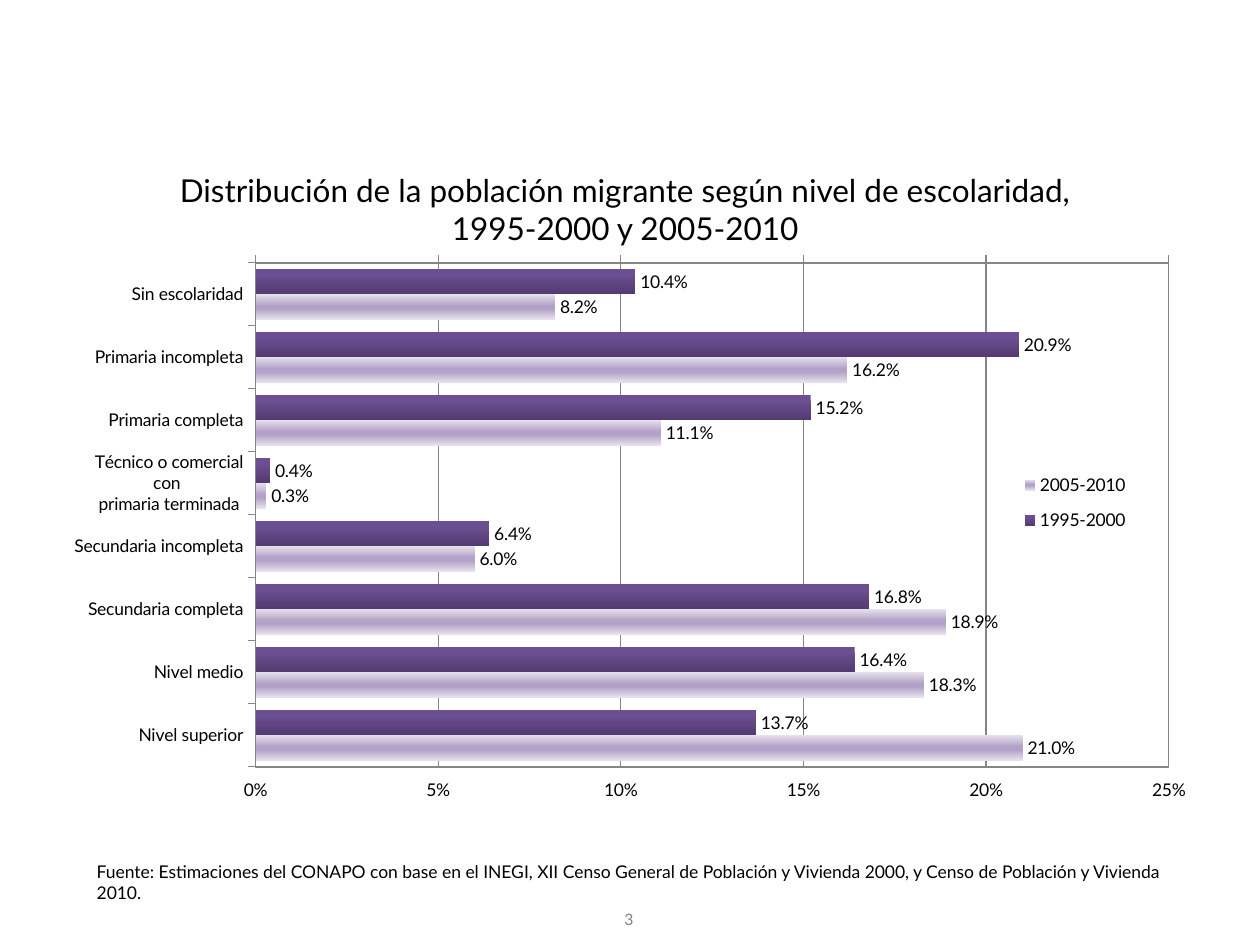
"""Build the slide on the schooling of the migrant population."""
from lxml import etree
from pptx import Presentation
from pptx import util as u
from pptx.chart.data import CategoryChartData
from pptx.dml.color import RGBColor
from pptx.enum import chart as c
from pptx.enum import text as t
from pptx.oxml import parse_xml
from pptx.oxml.ns import nsdecls, qn

FONT = "Lato"
BLACK, GREY, LINE = "000000", "808080", "868686"
TITLE = ("Distribución de la población migrante según nivel de escolaridad, "
         "1995-2000 y 2005-2010")
SOURCE = ("Fuente: Estimaciones del CONAPO con base en el INEGI, XII Censo General de "
          "Población y Vivienda 2000, y Censo de Población y Vivienda 2010.")
PAGE = "3"
LEVELS = ["Sin escolaridad", "Primaria incompleta", "Primaria completa",
          "Técnico o comercial con \nprimaria terminada", "Secundaria incompleta",
          "Secundaria completa", "Nivel medio", "Nivel superior"]
PERIODS = [
    ("1995-2000", [10.4, 20.9, 15.2, 0.4, 6.4, 16.8, 16.4, 13.7],
     [(0, "6B4F92"), (20, "6B4F92"), (100, "533A70")]),
    ("2005-2010", [8.2, 16.2, 11.1, 0.3, 6, 18.9, 18.3, 21],
     [(0, "E6E0EC"), (45, "B3A2C7"), (58, "B3A2C7"), (100, "E6E0EC")]),
]
TITLE_BOX = (88, 94, 538.5, 51)
CHART_BOX = (42.5, 144.7, 640.8, 323.3)
SOURCE_BOX = (48.2, 491.3, 623.5, 25.2)
PAGE_BOX = (320.2, 516.2, 78.5, 23.8)
PLOT_PERCENT = (15.9, 1.7, 81.7, 89.1)
LEGEND_PERCENT = (82.7, 36.6, 13, 15)


def color(value):
    return RGBColor.from_string(value)


def set_font(font, size, value=BLACK):
    font.name, font.size, font.bold = FONT, u.Pt(size), False
    font.color.rgb = color(value)


def write(shape, box, content, size, align, anchor=t.MSO_ANCHOR.MIDDLE, value=BLACK):
    shape.left, shape.top, shape.width, shape.height = map(u.Pt, box)
    frame = shape.text_frame
    frame.word_wrap, frame.auto_size = True, t.MSO_AUTO_SIZE.NONE
    frame.vertical_anchor = anchor
    frame.text = content
    paragraph = frame.paragraphs[0]
    paragraph.alignment = align
    set_font(paragraph.font, size, value)


def gradient(properties, stops):
    marks = "".join(f'<a:gs pos="{position * 1000}"><a:srgbClr val="{value}"/></a:gs>'
                    for position, value in stops)
    properties.insert(0, parse_xml(
        f'<a:gradFill {nsdecls("a")} rotWithShape="1"><a:gsLst>{marks}</a:gsLst>'
        '<a:lin ang="5400000" scaled="0"/></a:gradFill>'))


def place(element, percent, before, inner=False):
    for old in element.findall(qn("c:layout")):
        element.remove(old)
    holder = etree.Element(qn("c:layout"))
    manual = etree.SubElement(holder, qn("c:manualLayout"))
    settings = [("layoutTarget", "inner")] if inner else []
    settings += [("xMode", "edge"), ("yMode", "edge")]
    settings += [(tag, round(value / 100, 4)) for tag, value in zip("xywh", percent)]
    for tag, value in settings:
        etree.SubElement(manual, qn(f"c:{tag}")).set("val", str(value))
    element.find(qn(before)).addprevious(holder)


def add_chart(slide):
    data = CategoryChartData()
    data.categories = LEVELS
    for name, values, _ in PERIODS:
        data.add_series(name, values)
    chart = slide.shapes.add_chart(
        c.XL_CHART_TYPE.BAR_CLUSTERED, *map(u.Pt, CHART_BOX), data).chart
    set_font(chart.font, 10)
    chart.has_title = False
    plot = chart.plots[0]
    plot.gap_width, plot.overlap, plot.vary_by_categories = 50, 0, False
    for series, (_, _, stops) in zip(plot.series, PERIODS):
        series.invert_if_negative = False
        gradient(series.format.fill._xPr, stops)
        labels = series.data_labels
        labels.show_value = True
        labels.number_format, labels.number_format_is_linked = '#0.0"%"', False
        labels.position = c.XL_LABEL_POSITION.OUTSIDE_END
        set_font(labels.font, 10)

    levels, shares = chart.category_axis, chart.value_axis
    levels.reverse_order = True
    shares.tick_label_position = c.XL_TICK_LABEL_POSITION.HIGH
    shares.minimum_scale, shares.maximum_scale, shares.major_unit = 0, 25, 5
    shares.tick_labels.number_format = '#0"%"'
    shares.tick_labels.number_format_is_linked = False
    shares.has_major_gridlines = True
    for axis in (levels, shares):
        axis.major_tick_mark = c.XL_TICK_MARK.OUTSIDE
        set_font(axis.tick_labels.font, 10)
    for part in (levels, shares, shares.major_gridlines):
        part.format.line.color.rgb = color(LINE)
        part.format.line.width = u.Pt(0.75)

    area = plot._element.getparent()
    area.append(parse_xml(
        f'<c:spPr {nsdecls("c", "a")}><a:noFill/><a:ln w="9525"><a:solidFill>'
        f'<a:srgbClr val="{LINE}"/></a:solidFill></a:ln></c:spPr>'))
    place(area, PLOT_PERCENT, "c:barChart", inner=True)

    chart.has_legend = True
    legend = chart.legend
    legend.position = c.XL_LEGEND_POSITION.RIGHT
    legend.include_in_layout = False
    set_font(legend.font, 10)
    place(legend._element, LEGEND_PERCENT, "c:overlay")


def main():
    presentation = Presentation()
    presentation.slide_width, presentation.slide_height = u.Pt(720), u.Pt(540)
    slide = presentation.slides.add_slide(presentation.slide_layouts[5])
    write(slide.shapes.title, TITLE_BOX, TITLE, 18, t.PP_ALIGN.CENTER)
    add_chart(slide)
    for box, *details in (
            (SOURCE_BOX, SOURCE, 10, t.PP_ALIGN.LEFT),
            (PAGE_BOX, PAGE, 9, t.PP_ALIGN.CENTER, t.MSO_ANCHOR.TOP, GREY)):
        write(slide.shapes.add_textbox(*map(u.Pt, box)), box, *details)
    presentation.save("out.pptx")


if __name__ == "__main__":
    main()
